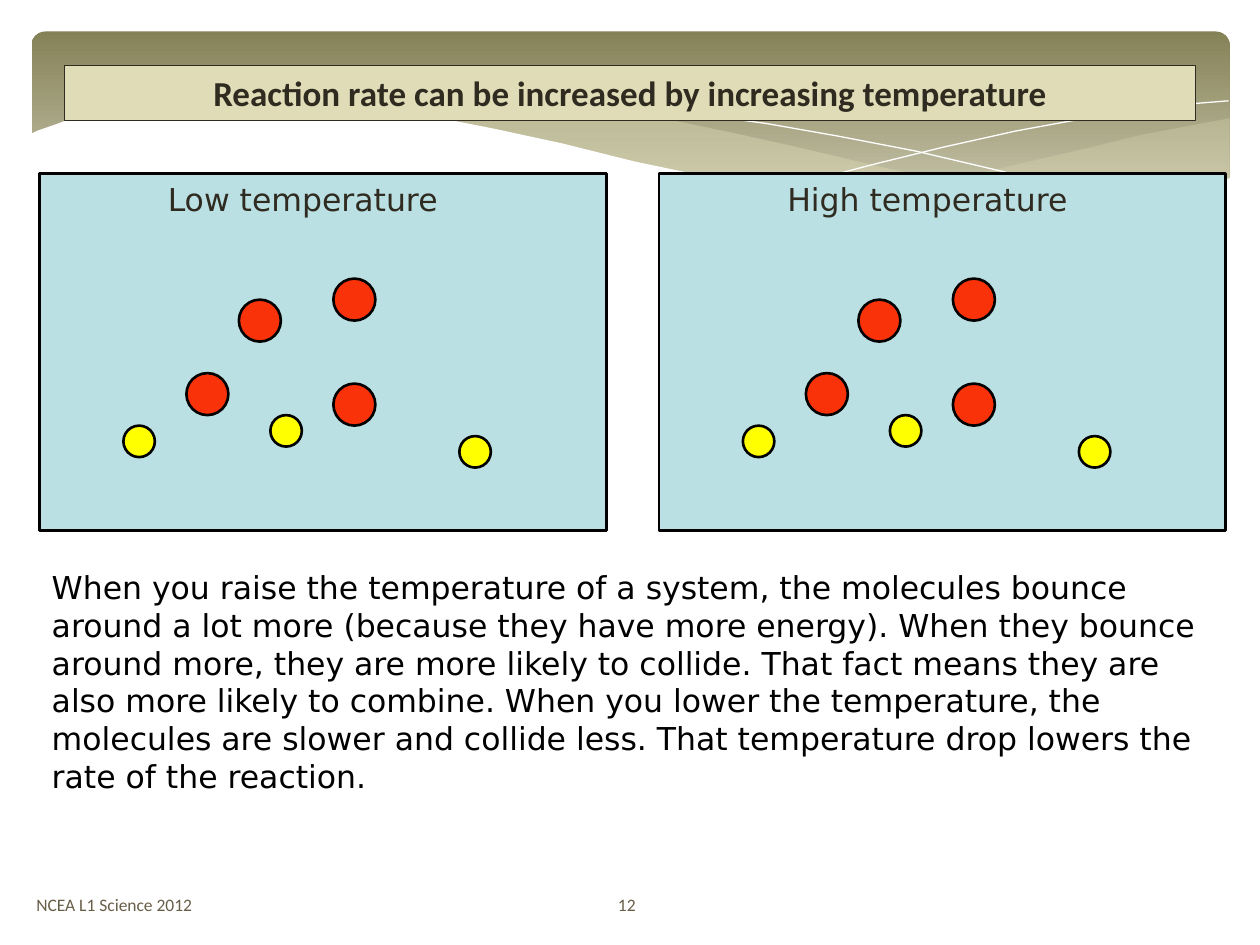
"""Build a slide on how temperature changes the rate of reaction."""
from lxml.etree import SubElement
from pptx import Presentation
from pptx.dml.color import RGBColor
from pptx.enum.shapes import MSO_SHAPE as Preset
from pptx.enum.text import MSO_ANCHOR as Anchor, PP_ALIGN as Align
from pptx.oxml.ns import qn
from pptx.util import Pt

COLORS = {
    "black": "000000", "white": "FFFFFF", "ink": "2F2B20", "footer": "675E47",
    "sand": "DFDCB7", "olive": "858157", "pale olive": "CBC9B0",
    "panel": "BBE0E3", "red": "FA320A", "yellow": "FFFF00",
}
TITLE = "Reaction rate can be increased by increasing temperature"
EXPLANATION = (
    "When you raise the temperature of a system, the molecules bounce around a lot more "
    "(because they have more energy). When they bounce around more, they are more likely "
    "to collide. That fact means they are also more likely to combine. When you lower the "
    "temperature, the molecules are slower and collide less. That temperature drop lowers "
    "the rate of the reaction."
)
FOOTER = "NCEA L1 Science 2012"
PAGE_NUMBER = "12"
PANELS = ["Low temperature", "High temperature"]
PANEL_LEFT, PANEL_TOP, PANEL_WIDTH, PANEL_HEIGHT, PANEL_STEP = 22.5, 99.2, 324, 204, 354
CAPTION_INSET = 66.3
MOLECULES = [
    ("red", 24, [(114, 72), (168, 60), (168, 120), (84, 114)]),
    ("yellow", 18, [(132, 138), (48, 144), (240, 150)]),
]

RIGHT_WAVE = [
    (702, 67.7), (682.6, 71.3), (652.3, 77), (619.9, 85), (579.6, 94.3), (542.2, 103),
    (508.3, 109.4), (475.9, 115.2), (507.6, 118.8), (545, 122.4), (578.2, 123.8),
    (601.2, 123.8), (628.6, 122.4), (651.6, 118.8), (673.2, 112.3), (702.7, 101.5),
    (702.7, 67.7),
]
LONG_WAVE = [
    (643, 120.2), (602.6, 114.5), (558, 107.3), (508.3, 96.5), (452.9, 83.5), (420.5, 76.3),
    (389.5, 69.8), (361.4, 64.8), (334.8, 61.9), (302.4, 59), (273.6, 57.6), (247.7, 57.6),
    (225.4, 59), (205.9, 61.9), (232.6, 64.8), (260.6, 69.8), (290.9, 76.3), (323.3, 83.5),
    (381.6, 97.2), (432.7, 107.3), (468, 113.8), (500.4, 118.8), (529.9, 121.7),
    (556.6, 123.8), (588.2, 124.6), (617, 123.1),
]
FALLING_LINE = [
    (222.5, 64.8), (236.2, 61.9), (254.2, 60.5), (278.6, 59), (311.8, 59), (352.1, 60.5),
    (400.3, 65.5), (437.8, 70.6), (478.8, 77.8), (523.4, 86.4), (572.4, 97.9),
    (625.7, 111.6), (653, 119.5),
]
RISING_LINE = [
    (441.4, 108.7), (470.2, 101.5), (500.4, 93.6), (538.6, 84.2), (580.3, 74.9),
    (623.5, 67), (655.2, 61.9), (684.7, 59), (702, 57.6),
]
LOWER_EDGE = [
    (703.4, 101.5), (684, 108.7), (662.4, 114.5), (638.6, 119.5), (612, 122.4),
    (582.5, 123.1), (547.9, 122.4), (509.8, 118.8), (466.6, 112.3), (416.9, 103.7),
    (362.2, 92.2), (321.8, 82.1), (281.5, 73.4), (244.8, 66.2), (210.2, 61.2), (180, 58.3),
    (151.9, 56.2), (127.4, 56.2), (105.1, 57.2), (85.7, 59), (68.4, 61.2), (54.7, 64.1),
    (42.5, 67), (33.1, 70.6), (20.9, 74.9), (16.6, 77), (16.6, 161.3), (703.4, 161.3),
]
WAVES = [
    (RIGHT_WAVE, {"fill": "sand", "opacity": 29}),
    (LONG_WAVE, {"fill": "sand", "opacity": 40}),
    (FALLING_LINE, {"line": "white", "width": 0}),
    (RISING_LINE, {"line": "white", "width": 0}),
    (LOWER_EDGE, {"fill": "white"}),
]


def rgb(name):
    return RGBColor.from_string(COLORS[name])


def paint(shape, fill=None, line=None, width=1.5, opacity=100):
    shape.shadow.inherit = False
    if fill:
        shape.fill.solid()
        shape.fill.fore_color.rgb = rgb(fill)
        if opacity < 100:
            color = shape.fill._xPr.find(".//" + qn("a:srgbClr"))
            SubElement(color, qn("a:alpha")).set("val", str(opacity * 1000))
    else:
        shape.fill.background()
    if line:
        shape.line.color.rgb = rgb(line)
        shape.line.width = Pt(width)
    else:
        shape.line.fill.background()


def add_preset(page, preset, bounds, **style):
    shape = page.shapes.add_shape(preset, *map(Pt, bounds))
    paint(shape, **style)
    return shape


def add_wave(page, points, **style):
    start, *rest = [(Pt(x), Pt(y)) for x, y in points]
    builder = page.shapes.build_freeform(*start, scale=1.0)
    builder.add_line_segments(rest, close="fill" in style)
    paint(builder.convert_to_shape(), **style)


def write(box, text, size=18, font="DejaVu Sans", color="ink", bold=False,
          align=Align.LEFT, anchor=Anchor.TOP):
    frame = box.text_frame
    frame.word_wrap = True
    frame.vertical_anchor = anchor
    para = frame.paragraphs[0]
    para.alignment = align
    span = para.add_run()
    span.text = text
    span.font.size = Pt(size)
    span.font.name = font
    span.font.bold = bold
    span.font.color.rgb = rgb(color)


def add_text(page, bounds, text, **style):
    write(page.shapes.add_textbox(*map(Pt, bounds)), text, **style)


def add_banner(page):
    banner = add_preset(page, Preset.ROUNDED_RECTANGLE, (18, 18, 684.7, 112.3))
    banner.adjustments[0] = 0.07
    banner.fill.gradient()
    banner.fill.gradient_angle = 270
    for stop, color, position in zip(banner.fill.gradient_stops,
                                     ("olive", "pale olive"), (0, 0.9)):
        stop.color.rgb = rgb(color)
        stop.position = position
    for points, style in WAVES:
        add_wave(page, points, **style)


def add_panel(page, left, caption):
    add_preset(page, Preset.RECTANGLE, (left, PANEL_TOP, PANEL_WIDTH, PANEL_HEIGHT),
               fill="panel", line="black")
    for color, size, places in MOLECULES:
        for x, y in places:
            add_preset(page, Preset.OVAL, (left + x, PANEL_TOP + y, size, size),
                       fill=color, line="black")
    add_text(page, (left + CAPTION_INSET, PANEL_TOP, 216, 29), caption)


def main():
    deck = Presentation()
    deck.slide_width, deck.slide_height = Pt(720), Pt(540)
    page = deck.slides.add_slide(deck.slide_layouts[6])
    add_banner(page)
    small = {"size": 10, "font": "Calibri", "color": "footer", "anchor": Anchor.MIDDLE}
    add_text(page, (13.7, 502.6, 298, 28.8), FOOTER, **small)
    add_text(page, (312.5, 502.6, 91.4, 28.8), PAGE_NUMBER, align=Align.CENTER, **small)
    add_text(page, (22.5, 321.1, 671.8, 141.8), EXPLANATION, color="black")
    for index, caption in enumerate(PANELS):
        add_panel(page, PANEL_LEFT + index * PANEL_STEP, caption)
    title = add_preset(page, Preset.RECTANGLE, (36.7, 37.4, 646.6, 31.7),
                       fill="sand", line="ink", width=0.75)
    write(title, TITLE, size=20, font="Calibri", bold=True, align=Align.CENTER)
    deck.save("out.pptx")


if __name__ == "__main__":
    main()
